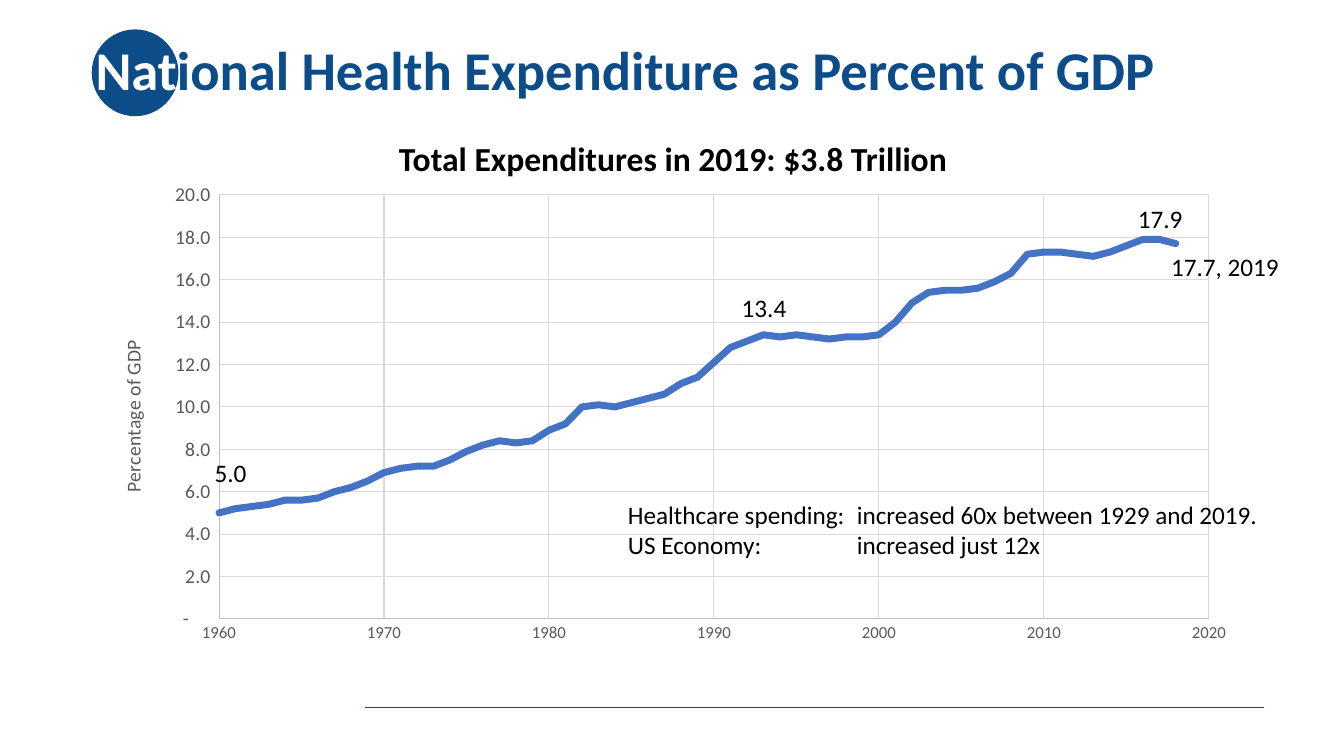
from dataclasses import dataclass

import lxml.etree
import pptx
import pptx.chart.data
import pptx.dml.color
import pptx.enum.chart
import pptx.enum.shapes
import pptx.enum.text
import pptx.oxml
import pptx.oxml.ns
import pptx.util

Pt = pptx.util.Pt
qn = pptx.oxml.ns.qn

FONT = "Calibri"
COLORS = {
    "navy": "0C4C88",
    "white": "FFFFFF",
    "black": "000000",
    "label": "595959",
    "axis": "BFBFBF",
    "grid": "D9D9D9",
    "series": "4472C4",
}
FIRST_YEAR = 1960
GDP_SHARES = [
    5, 5.2, 5.3, 5.4, 5.6, 5.6, 5.7, 6, 6.2, 6.5,
    6.9, 7.1, 7.2, 7.2, 7.5, 7.9, 8.2, 8.4, 8.3, 8.4,
    8.9, 9.2, 10, 10.1, 10, 10.2, 10.4, 10.6, 11.1, 11.4,
    12.1, 12.8, 13.1, 13.4, 13.3, 13.4, 13.3, 13.2, 13.3, 13.3,
    13.4, 14, 14.9, 15.4, 15.5, 15.5, 15.6, 15.9, 16.3, 17.2,
    17.3, 17.3, 17.2, 17.1, 17.3, 17.6, 17.9, 17.9, 17.7,
]


@dataclass
class Label:
    lines: list[str]
    left: float
    top: float
    width: float
    height: float
    size: float = 18
    bold: bool = False
    tab: float | None = None


@dataclass
class AxisStyle:
    minimum: float
    maximum: float
    step: float
    size: float
    number_format: str


LABELS = [
    Label(["5.0"], 146.2, 323.3, 37.4, 29),
    Label(["13.4"], 522.7, 205.2, 46.8, 29),
    Label(["17.9"], 805.7, 141.8, 46.8, 29),
    Label(["17.7, 2019"], 829.4, 175.7, 92.2, 29),
    Label(
        ["Healthcare spending:\tincreased 60x between 1929 and 2019.",
         "US Economy:\tincreased just 12x"],
        441.4, 352.8, 475, 51, tab=163.5,
    ),
    Label(["Total Expenditures in 2019: $3.8 Trillion"], 277.9, 95, 409.7, 36, 24, True),
]
YEAR_AXIS = AxisStyle(1960, 2020, 10, 12, "General")
SHARE_AXIS = AxisStyle(0, 20, 2, 14, '_(* #,##0.0_);_(* (#,##0.0);_(* "-"??_);_(@_)')


def color(name: str) -> pptx.dml.color.RGBColor:
    return pptx.dml.color.RGBColor.from_string(COLORS[name])


def style_font(font, size: float, tone: str, bold: bool = False) -> None:
    font.name = FONT
    font.size = Pt(size)
    font.bold = bold
    font.color.rgb = color(tone)


def style_line(line, tone: str, width: float) -> None:
    line.color.rgb = color(tone)
    line.width = Pt(width)


def add_heading(page) -> None:
    rule = page.shapes.add_connector(
        pptx.enum.shapes.MSO_CONNECTOR.STRAIGHT, Pt(260.6), Pt(505), Pt(902.9), Pt(505))
    style_line(rule.line, "navy", 0.5)
    lxml.etree.SubElement(rule._element.spPr, qn("a:effectLst"))

    circle = page.shapes.add_shape(
        pptx.enum.shapes.MSO_SHAPE.OVAL, Pt(65.5), Pt(21), Pt(62), Pt(62))
    circle.shadow.inherit = False
    circle.fill.solid()
    circle.fill.fore_color.rgb = color("navy")
    circle.line.fill.background()

    box = page.shapes.add_textbox(Pt(61.2), Pt(0), Pt(828), Pt(104.4))
    box.text_frame.word_wrap = True
    box.text_frame.vertical_anchor = pptx.enum.text.MSO_ANCHOR.MIDDLE
    para = box.text_frame.paragraphs[0]
    para.line_spacing = 0.9
    para.font.name = FONT
    para.font.size = Pt(39)
    para.font.bold = True
    for text, tone in (("Nat", "white"),
                       ("ional Health Expenditure as Percent of GDP", "navy")):
        span = para.add_run()
        span.text = text
        span.font.color.rgb = color(tone)


def style_axis(axis, style: AxisStyle) -> None:
    axis.minimum_scale = style.minimum
    axis.maximum_scale = style.maximum
    axis.major_unit = style.step
    axis.major_tick_mark = pptx.enum.chart.XL_TICK_MARK.NONE
    axis.minor_tick_mark = pptx.enum.chart.XL_TICK_MARK.NONE
    axis.has_major_gridlines = True
    style_line(axis.major_gridlines.format.line, "grid", 0.75)
    style_line(axis.format.line, "axis", 0.75)
    axis.tick_labels.number_format = style.number_format
    axis.tick_labels.number_format_is_linked = False
    style_font(axis.tick_labels.font, style.size, "label")


def make_layout(**settings) -> lxml.etree._Element:
    layout = pptx.oxml.parse_xml(
        f'<c:layout xmlns:c="{pptx.oxml.ns.nsuri("c")}"><c:manualLayout/></c:layout>')
    for tag, value in settings.items():
        lxml.etree.SubElement(layout[0], qn(f"c:{tag}")).set("val", str(value))
    return layout


def place_layout(parent, layout, after: str | None) -> None:
    for existing in parent.findall(qn("c:layout")):
        parent.remove(existing)
    if after is None:
        parent.insert(0, layout)
    else:
        parent.find(qn(after)).addnext(layout)


def add_gdp_chart(page) -> None:
    data = pptx.chart.data.XyChartData()
    points = data.add_series("Series 1")
    for year, share in enumerate(GDP_SHARES, FIRST_YEAR):
        points.add_data_point(year, share)
    chart = page.shapes.add_chart(
        pptx.enum.chart.XL_CHART_TYPE.XY_SCATTER_SMOOTH_NO_MARKERS,
        Pt(66.2), Pt(123.8), Pt(828), Pt(342.7), data).chart
    chart.has_legend = False
    chart.has_title = False
    style_font(chart.font, 10, "black")
    chart.plots[0].vary_by_categories = False
    style_axis(chart.category_axis, YEAR_AXIS)
    style_axis(chart.value_axis, SHARE_AXIS)

    title = chart.value_axis.axis_title
    para = title.text_frame.paragraphs[0]
    para.text = "Percentage of GDP"
    style_font(para.font, 14, "label")
    place_layout(title._element, make_layout(xMode="edge", yMode="edge", x=0.02, y=0.34), "c:tx")
    place_layout(
        chart._chartSpace.chart.plotArea,
        make_layout(layoutTarget="inner", xMode="edge", yMode="edge",
                    x=0.109, y=0.045, w=0.854, h=0.884),
        None)

    series = chart.plots[0].series[0]
    series.smooth = True
    series.marker.style = pptx.enum.chart.XL_MARKER_STYLE.NONE
    style_line(series.format.line, "series", 5)
    series._element.spPr.find(qn("a:ln")).set("cap", "rnd")


def add_label(page, label: Label) -> None:
    box = page.shapes.add_textbox(
        Pt(label.left), Pt(label.top), Pt(label.width), Pt(label.height))
    frame = box.text_frame
    frame.word_wrap = label.tab is not None
    for index, line in enumerate(label.lines):
        para = frame.add_paragraph() if index else frame.paragraphs[0]
        para.text = line
        if label.tab is not None:
            stops = lxml.etree.SubElement(para._p.get_or_add_pPr(), qn("a:tabLst"))
            stop = lxml.etree.SubElement(stops, qn("a:tab"))
            stop.set("pos", str(int(Pt(label.tab))))
            stop.set("algn", "l")
        style_font(para.font, label.size, "black", label.bold)


def main() -> None:
    deck = pptx.Presentation()
    deck.slide_width = Pt(960)
    deck.slide_height = Pt(540)
    page = deck.slides.add_slide(deck.slide_layouts[6])
    add_heading(page)
    add_gdp_chart(page)
    for label in LABELS:
        add_label(page, label)
    deck.save("out.pptx")


if __name__ == "__main__":
    main()
